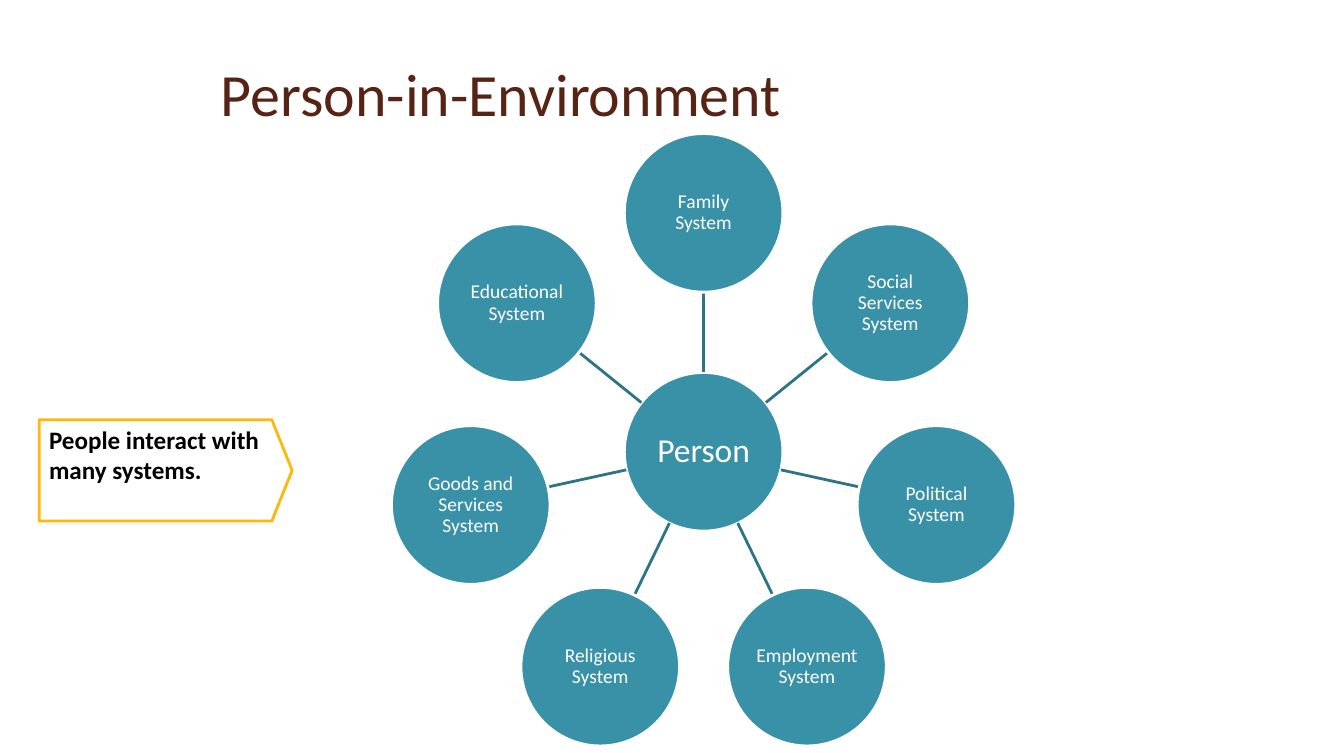
from math import cos, pi, sin

from lxml.etree import SubElement
from pptx import Presentation
from pptx.dml.color import RGBColor
from pptx.enum.shapes import MSO_CONNECTOR, MSO_SHAPE
from pptx.enum.text import MSO_ANCHOR, MSO_AUTO_SIZE, PP_ALIGN
from pptx.oxml.ns import qn
from pptx.util import Emu, Pt

PIXEL = 9144
WHITE = RGBColor(0xFF, 0xFF, 0xFF)
BLACK = RGBColor(0x00, 0x00, 0x00)
BROWN = RGBColor(0x57, 0x23, 0x14)
TEAL = RGBColor(0x38, 0x91, 0xA7)
DARK_TEAL = RGBColor(0x2D, 0x74, 0x86)
AMBER = RGBColor(0xFE, 0xB8, 0x0A)

CENTER_X, CENTER_Y = 701, 450
ORBIT = 238
DIAMETER = 158
SYSTEMS = [
    "Family System",
    "Social Services System",
    "Political System",
    "Employment System",
    "Religious System",
    "Goods and Services System",
    "Educational System",
]


def px(length):
    return Emu(round(length) * PIXEL)


def apply(target, values):
    for name, value in values.items():
        setattr(target, name, value)


class SystemsSlide:
    font_name = "Calibri"
    line_width = Pt(2)

    def __init__(self, deck):
        self.page = deck.slides.add_slide(deck.slide_layouts[5])

    def label(self, shape, text, size, color, frame_format, paragraph_format, bold=False):
        frame = shape.text_frame
        apply(frame, {"word_wrap": True, "auto_size": MSO_AUTO_SIZE.NONE, **frame_format})
        para = frame.paragraphs[0]
        apply(para, paragraph_format)
        span = para.add_run()
        span.text = text
        apply(span.font, {"name": self.font_name, "size": Pt(size), "bold": bold})
        span.font.color.rgb = color

    def title(self, text, left, top, width, height):
        title = self.page.shapes.title
        apply(title, {"left": px(left), "top": px(top), "width": px(width), "height": px(height)})
        self.label(title, text, 43, BROWN,
                   {"vertical_anchor": MSO_ANCHOR.MIDDLE}, {"alignment": PP_ALIGN.LEFT})

    def shape(self, kind, left, top, width, height, fill, line):
        shape = self.page.shapes.add_shape(kind, px(left), px(top), px(width), px(height))
        shape.shadow.inherit = False
        shape.fill.solid()
        shape.fill.fore_color.rgb = fill
        shape.line.color.rgb = line
        shape.line.width = self.line_width
        return shape

    def circle(self, text, x, y, size):
        circle = self.shape(MSO_SHAPE.OVAL, x - DIAMETER / 2, y - DIAMETER / 2,
                            DIAMETER, DIAMETER, TEAL, WHITE)
        margins = {f"margin_{side}": px(1) for side in ("left", "top", "right", "bottom")}
        self.label(circle, text, size, WHITE,
                   {"vertical_anchor": MSO_ANCHOR.MIDDLE, **margins},
                   {"alignment": PP_ALIGN.CENTER, "line_spacing": 0.9})

    def spoke(self, start, end):
        spoke = self.page.shapes.add_connector(
            MSO_CONNECTOR.STRAIGHT, *(px(value) for value in start + end))
        spoke.line.color.rgb = DARK_TEAL
        spoke.line.width = self.line_width
        SubElement(spoke.element.spPr, qn("a:effectLst"))

    def callout(self, text, left, top, width, height):
        callout = self.shape(MSO_SHAPE.PENTAGON, left, top, width, height, WHITE, AMBER)
        callout.adjustments[0] = 0.2
        self.label(callout, text, 18, BLACK,
                   {"vertical_anchor": MSO_ANCHOR.TOP}, {"alignment": PP_ALIGN.LEFT}, bold=True)


def orbit_point(angle, distance):
    return CENTER_X + distance * sin(angle), CENTER_Y - distance * cos(angle)


def main():
    deck = Presentation()
    apply(deck, {"slide_width": px(1339), "slide_height": px(750)})
    slide = SystemsSlide(deck)
    slide.title("Person-in-Environment", 210, 30, 1098, 125)
    slide.circle("Person", CENTER_X, CENTER_Y, 24)
    for index, system in enumerate(SYSTEMS):
        angle = 2 * pi * index / len(SYSTEMS)
        slide.spoke(orbit_point(angle, DIAMETER / 2), orbit_point(angle, ORBIT - DIAMETER / 2))
        slide.circle(system, *orbit_point(angle, ORBIT), 14)
    slide.callout("People interact with many systems.", 39, 418, 252, 101)
    deck.save("out.pptx")


if __name__ == "__main__":
    main()
